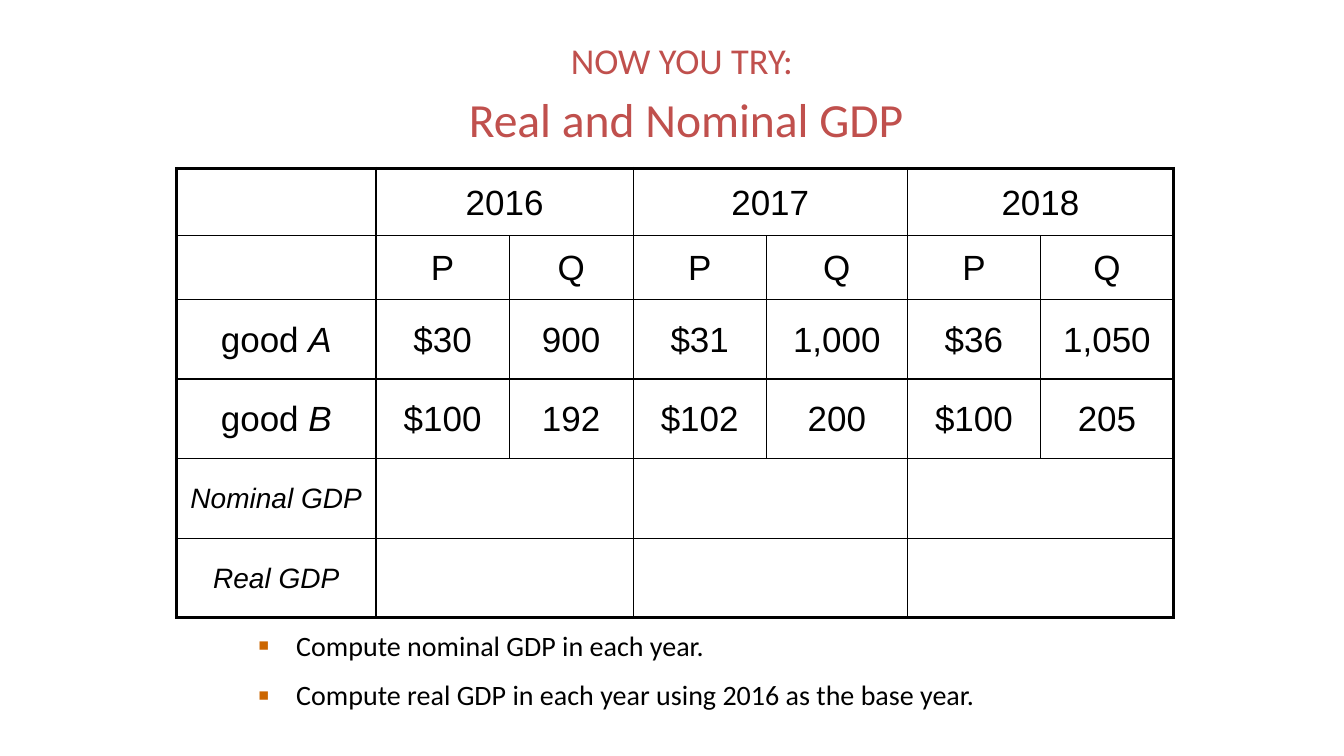
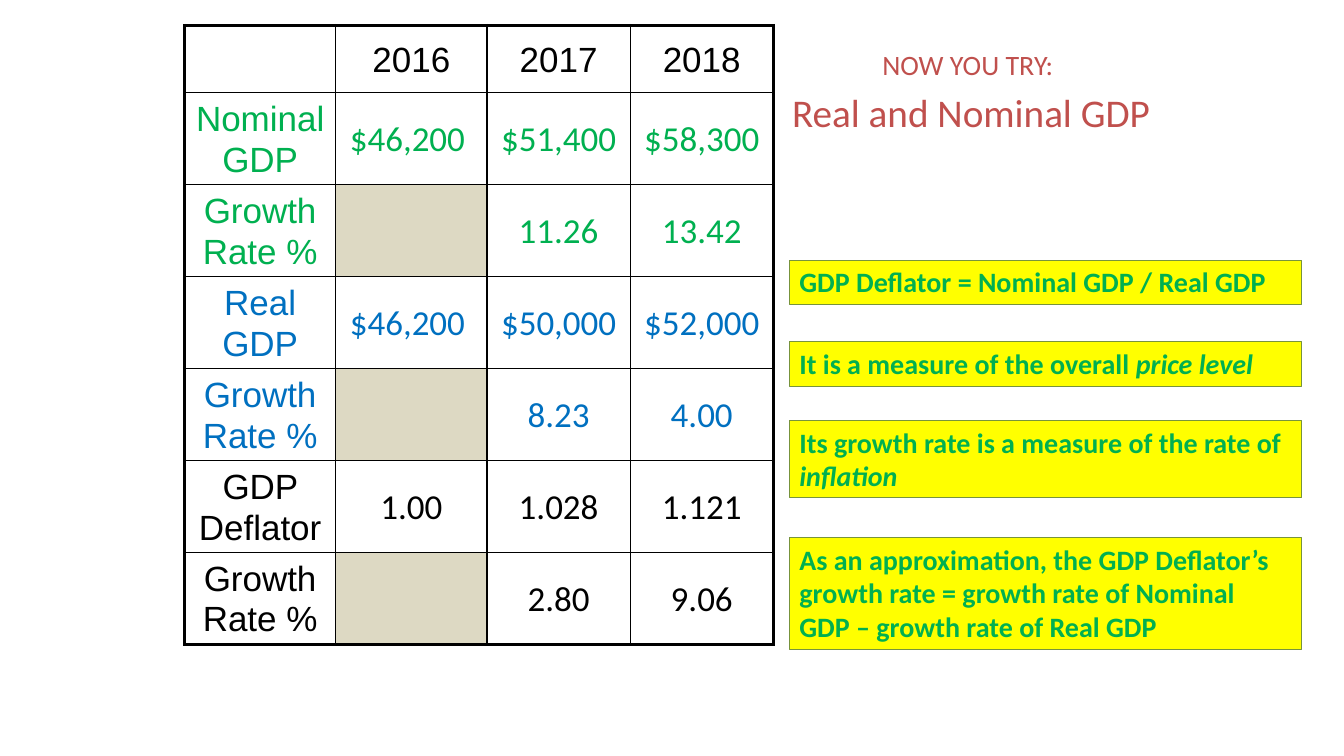
from lxml.etree import SubElement
from pptx import Presentation
from pptx.dml.color import RGBColor
from pptx.enum.shapes import MSO_SHAPE
from pptx.enum.text import MSO_ANCHOR, MSO_AUTO_SIZE, PP_ALIGN
from pptx.oxml.ns import qn
from pptx.util import Inches, Pt

# Shared style
BLACK, WHITE, RED = "000000", "FFFFFF", "C0504D"
GREEN, BLUE, TAN = "00B050", "0070C0", "DDD9C3"
YELLOW, OLIVE, ORANGE = "FFFF00", "77933C", "CC6600"
HEAD_FONT, BODY_FONT = "Arial", "Calibri"
OUTER, INNER = Pt(2.25), Pt(1)


def rgb(color):
    return RGBColor.from_string(color)


def inches(*lengths):
    return [Inches(length) for length in lengths]


def write(p, text, size=20, font=BODY_FONT, color=BLACK, bold=False,
          align=PP_ALIGN.LEFT, spacing=None):
    """Write text into a paragraph; parts between asterisks are italic."""
    p.alignment = align
    p.line_spacing = spacing
    for i, part in enumerate(text.split("*")):
        if part:
            r = p.add_run()
            r.text = part
            r.font.size, r.font.name = Pt(size), font
            r.font.bold, r.font.italic = bold, i % 2 == 1
            r.font.color.rgb = rgb(color)


def add_title(s, left, width, small, large):
    title = s.shapes.title
    title.left, title.top, title.width, title.height = inches(left, 0.23, width, 1.31)
    tf = title.text_frame
    tf.word_wrap, tf.auto_size = True, MSO_AUTO_SIZE.NONE
    tf.vertical_anchor = MSO_ANCHOR.MIDDLE
    p = tf.paragraphs[0]
    style = dict(color=RED, align=PP_ALIGN.CENTER, spacing=1.15)
    write(p, "NOW YOU TRY: ", size=small, **style)
    p.add_line_break()
    write(p, "Real and Nominal GDP", size=large, **style)


def add_bullets(s, box, items):
    tf = s.shapes.add_textbox(*inches(*box)).text_frame
    tf.word_wrap = True
    for i, item in enumerate(items):
        p = tf.add_paragraph() if i else tf.paragraphs[0]
        write(p, item, spacing=1.05)
        p.space_before = Pt(10)
        pPr = p._p.get_or_add_pPr()
        pPr.set("marL", str(Inches(0.38)))
        pPr.set("indent", str(-Inches(0.38)))
        SubElement(SubElement(pPr, qn("a:buClr")), qn("a:srgbClr"), val=ORANGE)
        SubElement(pPr, qn("a:buSzPct"), val="120000")
        SubElement(pPr, qn("a:buFont"), typeface=HEAD_FONT)
        SubElement(pPr, qn("a:buChar"), char="▪")


def set_borders(cell, widths):
    """Draw black cell borders; widths come as left, right, top, bottom."""
    tcPr = cell._tc.get_or_add_tcPr()
    for i, (side, width) in enumerate(zip("LRTB", widths)):
        ln = tcPr.makeelement(qn(f"a:ln{side}"), {"w": str(width)})
        SubElement(SubElement(ln, qn("a:solidFill")), qn("a:srgbClr"), val=BLACK)
        tcPr.insert(i, ln)


def add_grid(s, left, top, cols, rows, merged_rows=()):
    """Add a plain ruled table, joining column pairs in the merged rows."""
    frame = s.shapes.add_table(len(rows), len(cols),
                               *inches(left, top, sum(cols), sum(rows)))
    table = frame.table
    table.first_row = table.horz_banding = False
    for col, width in zip(table.columns, cols):
        col.width = Inches(width)
    for row, height in zip(table.rows, rows):
        row.height = Inches(height)
    for r in merged_rows:
        for c in range(1, len(cols), 2):
            table.cell(r, c).merge(table.cell(r, c + 1))
    for r in range(len(rows)):
        for c in range(len(cols)):
            cell = table.cell(r, c)
            cell.vertical_anchor = MSO_ANCHOR.MIDDLE
            cell.fill.solid()
            cell.fill.fore_color.rgb = rgb(WHITE)
            span = cell.span_width if cell.is_merge_origin else 1
            on_edge = (c == 0, c + span == len(cols), r == 0, r == len(rows) - 1)
            set_borders(cell, [OUTER if edge else INNER for edge in on_edge])
    return table


def write_cell(table, r, c, text, size=25, font=HEAD_FONT, color=BLACK):
    write(table.cell(r, c).text_frame.paragraphs[0], text, size=size, font=font,
          color=color, align=PP_ALIGN.CENTER, spacing=1.05)


def add_note(s, top, height, text):
    sp = s.shapes.add_shape(MSO_SHAPE.RECTANGLE, *inches(7.83, top, 5.08, height))
    sp.shadow.inherit = False
    sp.fill.solid()
    sp.fill.fore_color.rgb = rgb(YELLOW)
    sp.line.color.rgb, sp.line.width = rgb(OLIVE), Pt(0.75)
    tf = sp.text_frame
    tf.word_wrap, tf.auto_size = True, MSO_AUTO_SIZE.SHAPE_TO_FIT_TEXT
    tf.vertical_anchor = MSO_ANCHOR.TOP
    write(tf.paragraphs[0], text, color=GREEN, bold=True)


def build_exercise(s):
    add_title(s, 2.37, 8.87, 26, 34)
    add_bullets(s, (2.46, 6.17, 8.64, 0.93), [
        "Compute nominal GDP in each year.",
        "Compute real GDP in each year using 2016 as the base year.",
    ])
    table = add_grid(s, 1.75, 1.67, [1.98, 1.32, 1.23, 1.32, 1.4, 1.32, 1.32],
                     [0.67, 0.63] + [0.79] * 4, merged_rows=(0, 4, 5))
    content = [
        ["", "2016", "", "2017", "", "2018", ""],
        [""] + ["P", "Q"] * 3,
        ["good *A*", "$30", "900", "$31", "1,000", "$36", "1,050"],
        ["good *B*", "$100", "192", "$102", "200", "$100", "205"],
        ["*Nominal GDP*"],
        ["*Real GDP*"],
    ]
    for r, row in enumerate(content):
        for c, text in enumerate(row):
            if text:
                write_cell(table, r, c, text, size=20 if r >= 4 else 25)


def build_answers(s):
    add_title(s, 7.67, 3.92, 20, 28)
    table = add_grid(s, 1.83, 0.25, [1.5, 1.5, 1.42, 1.42], [0.67] + [0.91] * 6)
    for c, year in enumerate(["2016", "2017", "2018"], 1):
        write_cell(table, 0, c, year)
    # An empty first year is shaded: it has no growth rate
    content = [
        (GREEN, "Nominal GDP", "$46,200 ", "$51,400", "$58,300"),
        (GREEN, "Growth Rate %", "", "11.26", "13.42"),
        (BLUE, "Real GDP", "$46,200 ", "$50,000", "$52,000"),
        (BLUE, "Growth Rate %", "", "8.23", "4.00"),
        (BLACK, "GDP Deflator", "1.00", "1.028", "1.121"),
        (BLACK, "Growth Rate %", "", "2.80", "9.06"),
    ]
    for r, (color, label, *values) in enumerate(content, 1):
        write_cell(table, r, 0, label, color=color)
        for c, value in enumerate(values, 1):
            if value:
                write_cell(table, r, c, value, font=BODY_FONT, color=color)
            else:
                table.cell(r, c).fill.fore_color.rgb = rgb(TAN)

    # Notes on the deflator
    for top, height, text in [
        (2.58, 0.44, "GDP Deflator = Nominal GDP / Real GDP"),
        (3.39, 0.44, "It is a measure of the overall *price level*"),
        (4.17, 0.77, "Its growth rate is a measure of the rate of *inflation*"),
        (5.33, 1.11, "As an approximation, the GDP Deflator’s growth rate = "
                     "growth rate of Nominal GDP – growth rate of Real GDP"),
    ]:
        add_note(s, top, height, text)


def main():
    prs = Presentation()
    prs.slide_width, prs.slide_height = inches(13.33, 7.5)
    title_only = prs.slide_layouts[5]
    for build in (build_exercise, build_answers):
        build(prs.slides.add_slide(title_only))
    prs.save("out.pptx")


if __name__ == "__main__":
    main()
